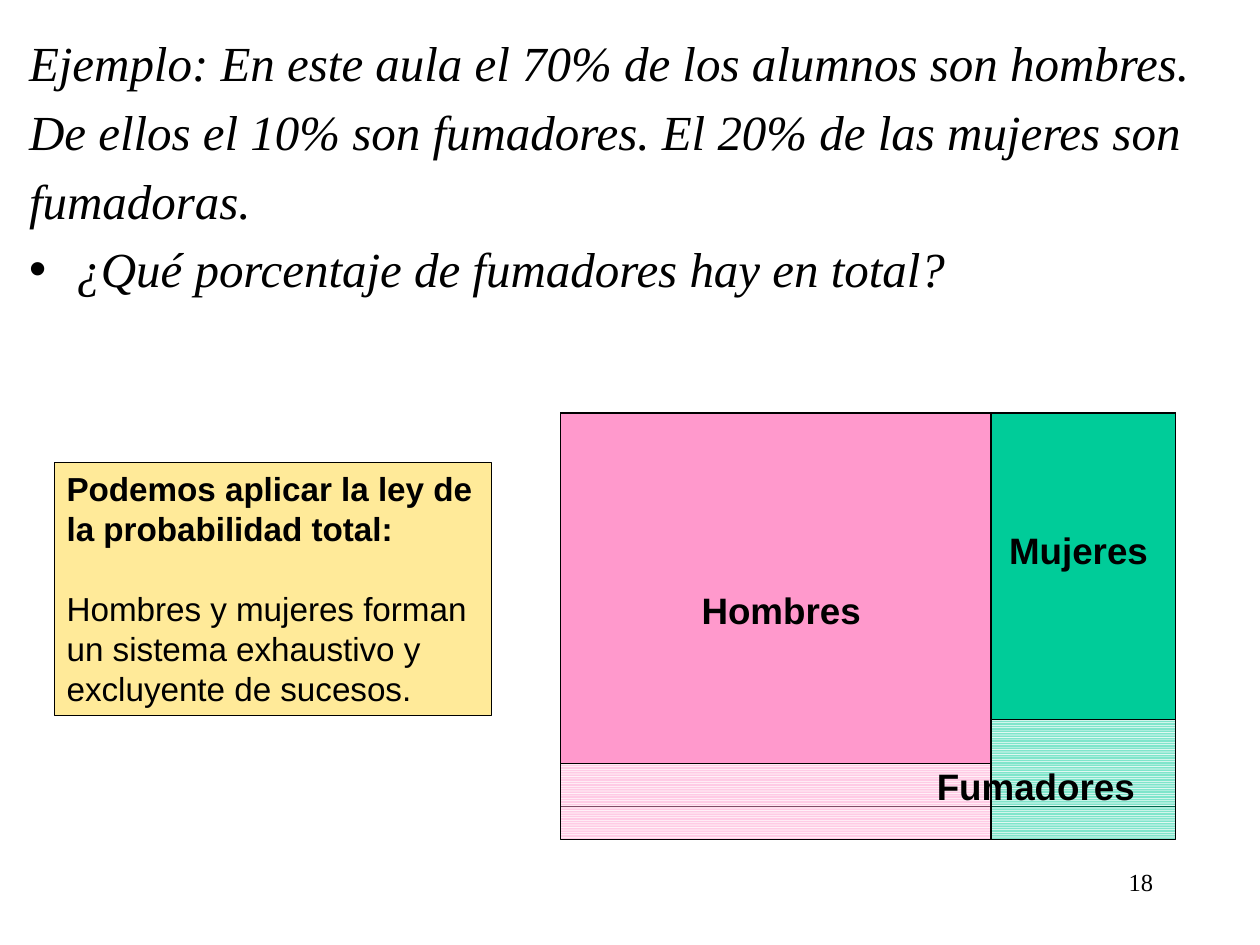
import pptx
import pptx.util
import pptx.dml.color
import pptx.enum.dml
import pptx.enum.shapes
import pptx.enum.text
import pptx.oxml
import pptx.oxml.ns

Pt = pptx.util.Pt
RGB = pptx.dml.color.RGBColor
Align = pptx.enum.text.PP_ALIGN
qn = pptx.oxml.ns.qn

BLACK = RGB(0, 0, 0)
WHITE = RGB(255, 255, 255)
PINK = RGB(0xFF, 0x99, 0xCC)
GREEN = RGB(0, 0xCC, 0x99)
GOLD = RGB(0xFF, 0xCC, 0)

LINES = [
    ("Ejemplo: En este aula el 70% de los alumnos son hombres.", False),
    ("De ellos el 10% son fumadores. El 20% de las mujeres son", False),
    ("fumadoras.", False),
    ("¿Qué porcentaje de fumadores hay en total?", True),
]
NOTE = [
    ("Podemos aplicar la ley de la probabilidad total:", True, 0),
    ("Hombres y mujeres forman", False, 22.8),
    ("un sistema exhaustivo y excluyente de sucesos.", False, 0),
]
LABELS = [
    ("Mujeres", 569.5, 298.3, 98),
    ("Hombres", 393.8, 332.6, 112),
    ("Fumadores", 528.2, 432.7, 130.3),
]

LEFT, TOP, WIDE, HIGH = 320.4, 236, 351.2, 225
MID = LEFT + WIDE * 0.7
END = 479.8
GROUPS = [
    (LEFT, MID, 436.2, PINK),
    (MID, LEFT + WIDE, 411.1, GREEN),
]


def style(run, **vals):
    vals = {"name": "Arial", "size": Pt(21), "bold": True} | vals
    for key, val in vals.items():
        setattr(run.font, key, val)
    run.font.color.rgb = BLACK


def fade(node, part):
    for color in node.iter(qn("a:srgbClr")):
        alpha = color.makeelement(qn("a:alpha"), {"val": str(part * 1000)})
        color.append(alpha)


def box(x, y, w, h, color=None, hatch=False, alpha=None):
    shape = slide.shapes.add_shape(
        pptx.enum.shapes.MSO_SHAPE.RECTANGLE, Pt(x), Pt(y), Pt(w), Pt(h))
    shape.shadow.inherit = False
    fill = shape.fill
    if color is None:
        fill.background()
    elif hatch:
        fill.patterned()
        fill.pattern = pptx.enum.dml.MSO_PATTERN.LIGHT_HORIZONTAL
        fill.fore_color.rgb = color
        fill.back_color.rgb = WHITE
    else:
        fill.solid()
        fill.fore_color.rgb = color
    if alpha:
        fade(shape._element.spPr, alpha)
    shape.line.color.rgb = BLACK
    shape.line.width = Pt(0.75)
    return shape


def label(text, x, y, w, h, **vals):
    frame = slide.shapes.add_textbox(Pt(x), Pt(y), Pt(w), Pt(h)).text_frame
    frame.word_wrap = True
    para = frame.paragraphs[0]
    run = para.add_run()
    run.text = text
    style(run, **vals)
    return para


deck = pptx.Presentation()
deck.slide_width, deck.slide_height = Pt(720), Pt(540)
slide = deck.slides.add_slide(deck.slide_layouts[1])
title = slide.shapes.title
title._element.getparent().remove(title._element)

num = label("18", 516.2, 491.8, 149.8, 36,
            name="Times New Roman", size=Pt(14), bold=False)
num.alignment = Align.RIGHT

body = slide.placeholders[1]
body.left, body.top, body.width, body.height = Pt(9.4), Pt(15.1), Pt(710.6), Pt(524.9)
frame = body.text_frame
for i, (text, dot) in enumerate(LINES):
    para = frame.paragraphs[0] if i == 0 else frame.add_paragraph()
    para.space_before = Pt(5.6)
    run = para.add_run()
    run.text = text
    style(run, name="Times New Roman", size=Pt(28), bold=False, italic=True)
    props = para._p.get_or_add_pPr()
    props.set("marL", str(Pt(27)))
    props.set("indent", str(-Pt(27)))
    mark = qn("a:buChar" if dot else "a:buNone")
    props.append(props.makeelement(mark, {"char": "•"} if dot else {}))

box(LEFT, TOP, WIDE, HIGH)
split = slide.shapes.add_connector(
    pptx.enum.shapes.MSO_CONNECTOR.STRAIGHT, Pt(MID), Pt(TOP + HIGH), Pt(MID), Pt(TOP))
split.line.color.rgb = BLACK
split.line.width = Pt(0.75)
props = split._element.spPr
props.append(props.makeelement(qn("a:effectLst"), {}))

for x, right, cut, color in GROUPS:
    box(x, cut, right - x, END - cut, color, hatch=True, alpha=50)
for x, right, cut, color in GROUPS:
    box(x, TOP, right - x, cut - TOP, color)
for text, x, y, w in LABELS:
    label(text, x, y, w, 32.4)

note = box(31, 264.2, 249.8, 144.7, GOLD, alpha=40)
frame = note.text_frame
frame.word_wrap = True
frame.vertical_anchor = pptx.enum.text.MSO_ANCHOR.TOP
for i, (text, bold, gap) in enumerate(NOTE):
    para = frame.paragraphs[0] if i == 0 else frame.add_paragraph()
    para.alignment = Align.LEFT
    para.space_before = Pt(gap)
    run = para.add_run()
    run.text = text
    style(run, size=Pt(19), bold=bold)

deck.save("out.pptx")
